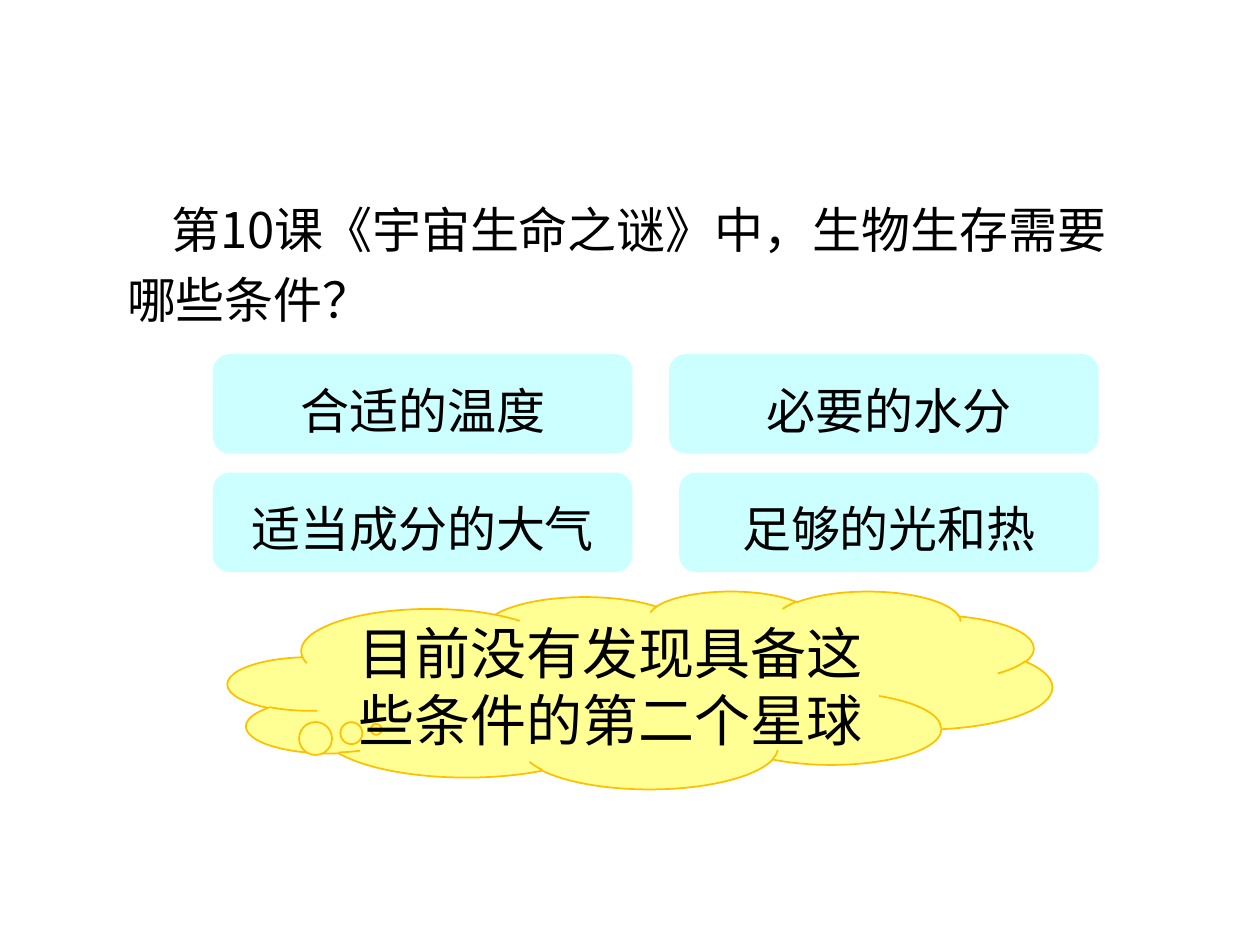
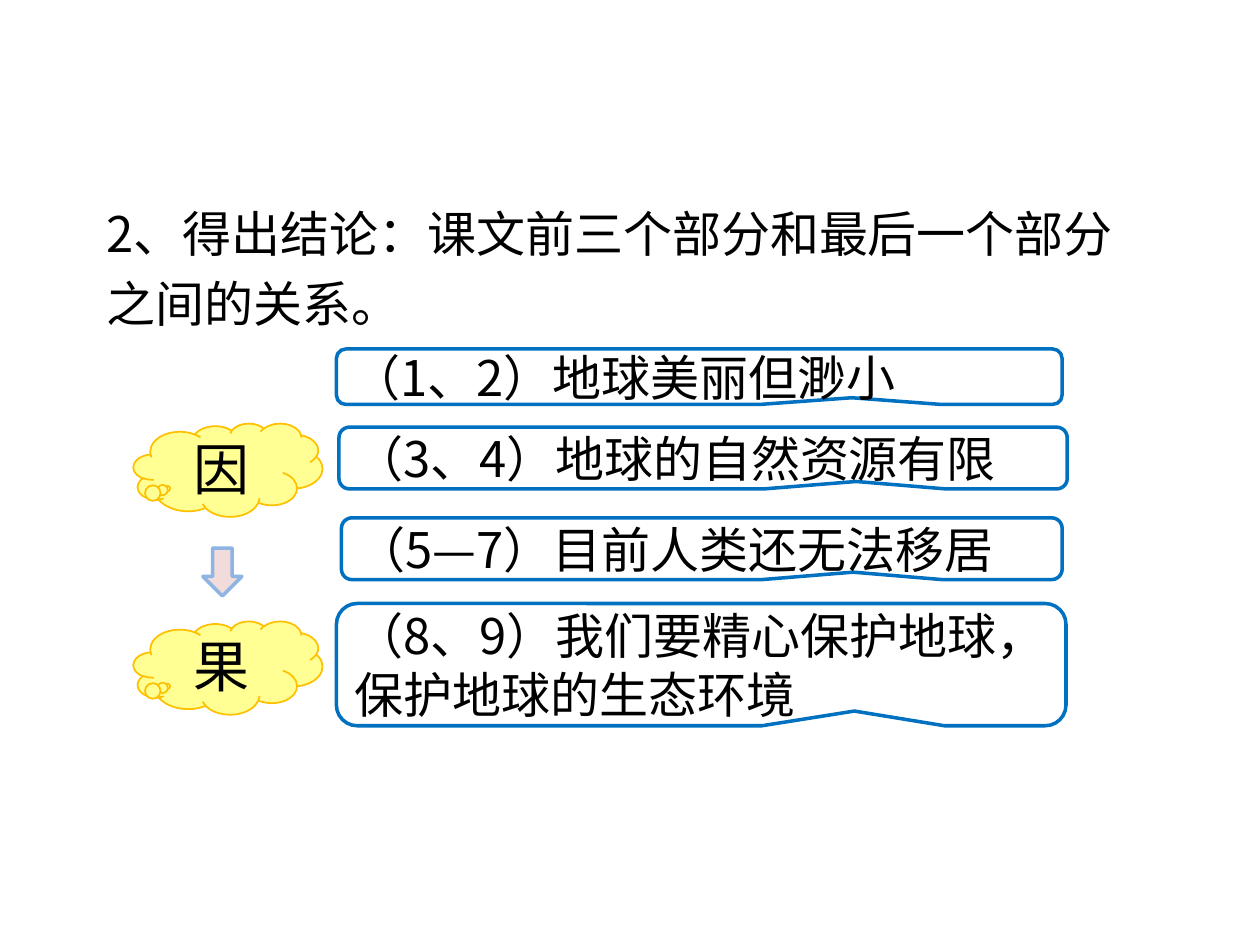
from lxml import etree
from pptx import Presentation
from pptx import util as u
from pptx.dml import color
from pptx.enum import shapes, text
from pptx.oxml import ns

FONT = "Noto Sans CJK SC"
COLORS = {
    "ink": "000000",
    "aqua": "CCFFFF",
    "yellow": "FFFF93",
    "gold": "FFC000",
    "blue": "0070C0",
    "pink": "F2DCDB",
    "sky": "8EB4E3",
}

KIND = shapes.MSO_SHAPE
CENTER, LEFT = text.PP_ALIGN.CENTER, text.PP_ALIGN.LEFT
STYLES = {
    "condition": dict(kind=KIND.ROUNDED_RECTANGULAR_CALLOUT, adjust=(-0.5, 0.13, 0.17),
                      fill="aqua", align=CENTER, size=28, spacing=1.2),
    "reason": dict(kind=KIND.ROUNDED_RECTANGULAR_CALLOUT, adjust=(0.21, 0.38, 0.17),
                   line="blue", weight=2, align=LEFT, size=28, spacing=1.0),
    "cloud": dict(kind=KIND.CLOUD_CALLOUT, adjust=(-0.32, 0.2), fill="yellow",
                  line="gold", weight=1, align=CENTER, size=32, spacing=1.0),
    "arrow": dict(kind=KIND.DOWN_ARROW, fill="pink", line="sky", weight=2),
}

ROW_TOP, ROW_STEP, ROW_HEIGHT = 2.81, 0.94, 0.79
CONDITION_ROWS = [
    [("合适的温度", 1.69, 3.33), (" 必要的水分", 5.31, 3.41)],
    [("适当成分的大气", 1.69, 3.33), ("足够的光和热", 5.39, 3.33)],
]
REASONS = [
    ("（1、2）地球美丽但渺小", (2.67, 2.77, 5.76, 0.44)),
    ("（3、4）地球的自然资源有限", (2.69, 3.39, 5.78, 0.49)),
    ("（5—7）目前人类还无法移居", (2.71, 4.11, 5.72, 0.49)),
    ("（8、9）我们要精心保护地球，保护地球的生态环境", (2.67, 4.79, 5.79, 0.97)),
]
CAUSE_AND_EFFECT = [("因", 3.36), ("果", 4.93)]

SLIDES = [
    dict(
        title="第10课《宇宙生命之谜》中，生物生存需要哪些条件？",
        title_at=(0.91, 1.44, 8.35, 1.23),
        indent=0.35,
        parts=[("condition", words, (left, ROW_TOP + row * ROW_STEP, width, ROW_HEIGHT))
               for row, cells in enumerate(CONDITION_ROWS)
               for words, left, width in cells]
        + [("cloud", "目前没有发现具备这些条件的第二个星球", (1.81, 4.69, 6.54, 1.57))],
    ),
    dict(
        title="2、得出结论：课文前三个部分和最后一个部分之间的关系。",
        title_at=(0.75, 1.47, 8.5, 1.23),
        indent=0,
        parts=[("reason", words, place) for words, place in REASONS]
        + [("cloud", words, (1.06, top, 1.5, 0.74)) for words, top in CAUSE_AND_EFFECT]
        + [("arrow", "", (1.61, 4.35, 0.31, 0.38))],
    ),
]


def rgb(name):
    return color.RGBColor.from_string(COLORS[name])


def inches(place):
    return [u.Inches(value) for value in place]


def write(box, words, size, align, spacing, anchor, indent=0):
    frame = box.text_frame
    frame.word_wrap = True
    frame.vertical_anchor = anchor
    para = frame.paragraphs[0]
    for name, value in dict(alignment=align, line_spacing=spacing).items():
        setattr(para, name, value)
    if indent:
        para._p.get_or_add_pPr().set("indent", str(u.Inches(indent)))
    span = para.add_run()
    span.text = words
    for name, value in dict(name=FONT, size=u.Pt(size)).items():
        setattr(span.font, name, value)
    span.font.color.rgb = rgb("ink")
    east_asian = etree.SubElement(span._r.get_or_add_rPr(), ns.qn("a:ea"))
    east_asian.set("typeface", FONT)


def add_part(page, style_name, words, place):
    style = STYLES[style_name]
    shape = page.shapes.add_shape(style["kind"], *inches(place))
    shape.shadow.inherit = False
    for index, value in enumerate(style.get("adjust", ())):
        shape.adjustments[index] = value
    if "fill" in style:
        shape.fill.solid()
        shape.fill.fore_color.rgb = rgb(style["fill"])
    else:
        shape.fill.background()
    if "line" in style:
        shape.line.color.rgb = rgb(style["line"])
        shape.line.width = u.Pt(style["weight"])
    else:
        shape.line.fill.background()
    if words:
        write(shape, words, style["size"], style["align"], style["spacing"],
              text.MSO_ANCHOR.MIDDLE)


def main():
    deck = Presentation()
    deck.slide_width, deck.slide_height = inches((10, 7.5))
    for content in SLIDES:
        page = deck.slides.add_slide(deck.slide_layouts[6])
        title = page.shapes.add_textbox(*inches(content["title_at"]))
        write(title, content["title"], 28, LEFT, 1.2, text.MSO_ANCHOR.TOP, content["indent"])
        for part in content["parts"]:
            add_part(page, *part)
    deck.save("out.pptx")


if __name__ == "__main__":
    main()
